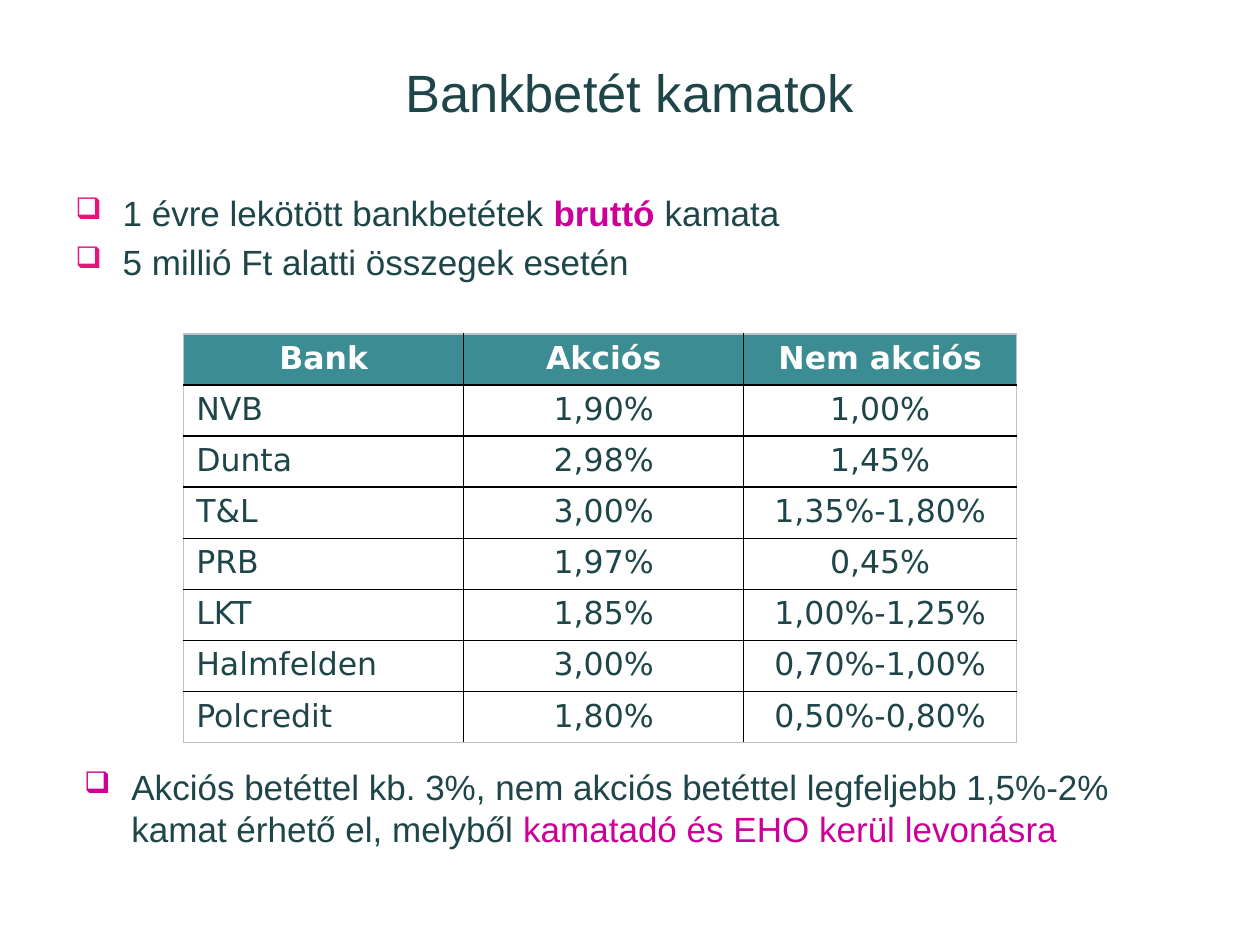
from lxml.etree import SubElement
from pptx import Presentation
from pptx.dml.color import RGBColor
from pptx.enum.text import MSO_ANCHOR as Anchor, PP_ALIGN as Align
from pptx.oxml.ns import qn
from pptx.util import Pt

INK = RGBColor(0x1E, 0x46, 0x49)
TEAL = RGBColor(0x3C, 0x8C, 0x93)
MAGENTA = RGBColor(0xCC, 0x00, 0x99)
PINK = RGBColor(0xE5, 0x14, 0x7A)
WHITE = RGBColor(0xFF, 0xFF, 0xFF)
BLACK = RGBColor(0x00, 0x00, 0x00)
GRAY = RGBColor(0xC0, 0xC0, 0xC0)

RATES = [
    ("Bank", "Akciós", "Nem akciós"),
    ("NVB", "1,90%", "1,00%"),
    ("Dunta", "2,98%", "1,45%"),
    ("T&L", "3,00%", "1,35%-1,80%"),
    ("PRB", "1,97%", "0,45%"),
    ("LKT", "1,85%", "1,00%-1,25%"),
    ("Halmfelden", "3,00%", "0,70%-1,00%"),
    ("Polcredit", "1,80%", "0,50%-0,80%"),
]


class SlideBuilder:
    text_font = "Arial"
    table_font = "DejaVu Sans"
    title_size = 30
    body_size = 20
    table_size = 18
    indent = 27

    def __init__(self, slide):
        self.slide = slide

    def style(self, run, size, color=INK, bold=False, name=text_font):
        run.font.name = name
        run.font.size = Pt(size)
        run.font.bold = bold
        run.font.color.rgb = color

    def text_box(self, left, top, width, height):
        shape = self.slide.shapes.add_textbox(Pt(left), Pt(top), Pt(width), Pt(height))
        shape.text_frame.word_wrap = True
        return shape.text_frame

    def title(self, text, *bounds):
        text_frame = self.text_box(*bounds)
        text_frame.vertical_anchor = Anchor.MIDDLE
        text_frame.text = text
        paragraph = text_frame.paragraphs[0]
        paragraph.alignment = Align.CENTER
        self.style(paragraph.runs[0], self.title_size)

    def bullet(self, paragraph, color):
        properties = paragraph._p.get_or_add_pPr()
        properties.set("marL", str(Pt(self.indent)))
        properties.set("indent", str(-Pt(self.indent)))
        bullet_color = SubElement(properties, qn("a:buClr"))
        SubElement(bullet_color, qn("a:srgbClr"), val=str(color))
        SubElement(properties, qn("a:buSzPct"), val="85000")
        SubElement(properties, qn("a:buChar"), char="❑")

    def bullets(self, items, color, *bounds):
        text_frame = self.text_box(*bounds)
        for index, parts in enumerate(items):
            paragraph = text_frame.paragraphs[0] if index == 0 else text_frame.add_paragraph()
            self.bullet(paragraph, color)
            if index:
                paragraph.space_before = Pt(4)
            for text, text_color, bold in parts:
                run = paragraph.add_run()
                run.text = text
                self.style(run, self.body_size, text_color, bold)

    def border(self, cell, side, color):
        line = SubElement(cell._tc.get_or_add_tcPr(), qn(f"a:ln{side}"), w=str(Pt(1)))
        SubElement(SubElement(line, qn("a:solidFill")), qn("a:srgbClr"), val=str(color))

    def table(self, rows, left, top, widths, row_height):
        frame = self.slide.shapes.add_table(
            len(rows), len(widths), Pt(left), Pt(top), Pt(sum(widths)), Pt(row_height * len(rows)))
        table = frame.table
        for column, width in zip(table.columns, widths):
            column.width = Pt(width)
        for row_index, values in enumerate(rows):
            table.rows[row_index].height = Pt(row_height)
            header = row_index == 0
            for column_index, value in enumerate(values):
                cell = table.cell(row_index, column_index)
                edges = {
                    "L": column_index == 0,
                    "R": column_index == len(widths) - 1,
                    "T": header,
                    "B": row_index == len(rows) - 1,
                }
                for side, outer in edges.items():
                    self.border(cell, side, GRAY if outer else BLACK)
                cell.fill.solid()
                cell.fill.fore_color.rgb = TEAL if header else WHITE
                cell.text_frame.text = value
                paragraph = cell.text_frame.paragraphs[0]
                paragraph.alignment = Align.CENTER if header or column_index else Align.LEFT
                self.style(paragraph.runs[0], self.table_size, WHITE if header else INK,
                           header, self.table_font)


def main():
    presentation = Presentation()
    presentation.slide_width = Pt(720)
    presentation.slide_height = Pt(540)
    builder = SlideBuilder(presentation.slides.add_slide(presentation.slide_layouts[6]))

    builder.title("Bankbetét kamatok", 36, 16, 648, 73)
    builder.table(RATES, 105, 190.8, (160, 160, 156), 29.2)
    builder.bullets([
        [("1 évre lekötött bankbetétek ", INK, False),
         ("bruttó ", MAGENTA, True),
         ("kamata", INK, False)],
        [("5 millió Ft alatti összegek esetén", INK, False)],
    ], PINK, 36, 106, 648, 85)
    builder.bullets([
        [("Akciós betéttel kb. 3%, nem akciós betéttel legfeljebb 1,5%-2% "
          "kamat érhető el, melyből ", INK, False),
         ("kamatadó és EHO kerül levonásra", MAGENTA, False)],
    ], MAGENTA, 41, 434, 648, 63)

    presentation.save("out.pptx")


if __name__ == "__main__":
    main()
